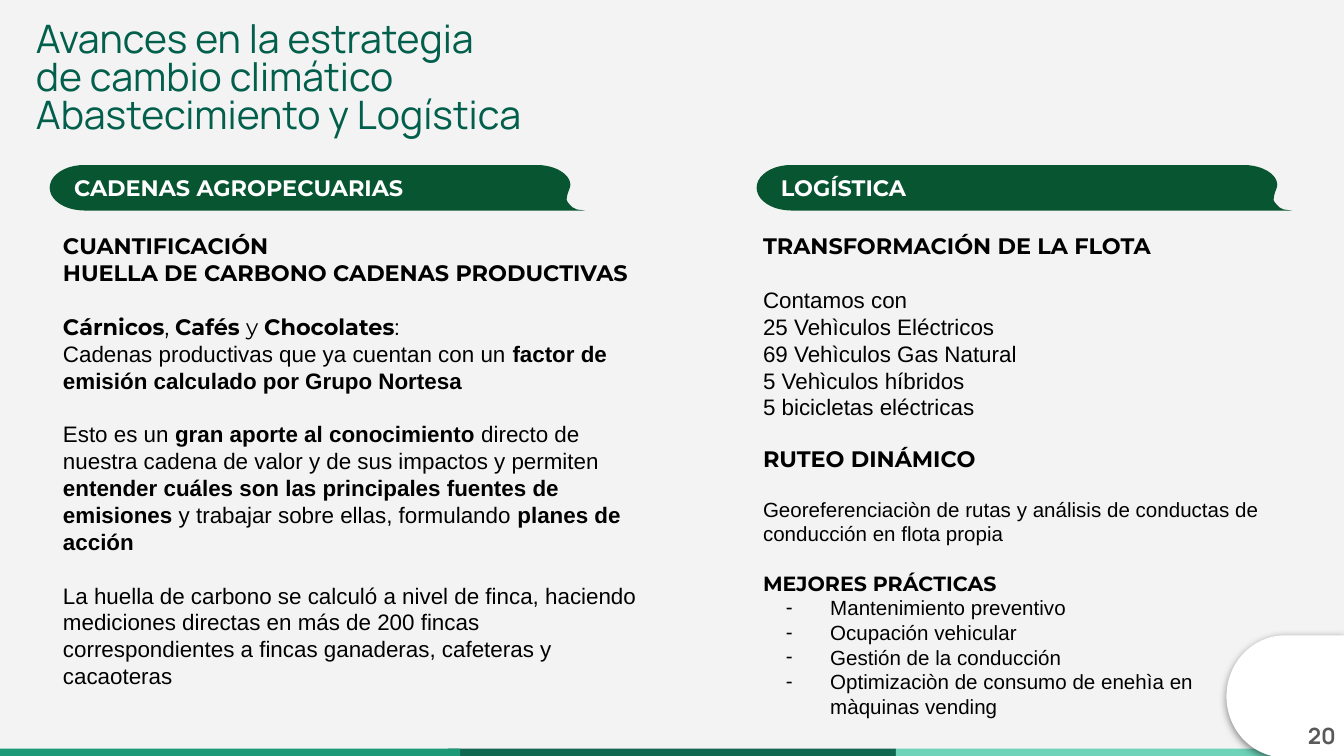
from math import cos, pi, sin

from lxml.etree import SubElement
from pptx import Presentation
from pptx.dml.color import RGBColor
from pptx.enum.shapes import MSO_SHAPE as SHAPE
from pptx.enum.text import MSO_ANCHOR as ANCHOR, MSO_AUTO_SIZE as AUTO, PP_ALIGN as ALIGN
from pptx.oxml.ns import qn
from pptx.util import Cm, Pt

BACKGROUND = RGBColor(0xF3, 0xF3, 0xF3)
BLACK = RGBColor(0, 0, 0)
WHITE = RGBColor(0xFF, 0xFF, 0xFF)
GREY = RGBColor(0x59, 0x59, 0x59)
TITLE_GREEN = RGBColor(0x01, 0x5F, 0x4B)
BANNER_GREEN = RGBColor(0x08, 0x56, 0x31)
DARK = RGBColor(0x11, 0x68, 0x50)
LIGHT = RGBColor(0x6E, 0xD3, 0xB8)
MEDIUM = RGBColor(0x1C, 0x9A, 0x78)

HEAD, BODY, DISPLAY = "Montserrat", "Arial", "Manrope"
PANEL_TOP, PANEL_HEIGHT = 4.14, 9.83

# Paragraphs: text with *bold* parts, font, size, space before, dash
SUPPLY = [
    ("*CUANTIFICACIÓN*", HEAD, 12, 0, False),
    ("*HUELLA DE CARBONO CADENAS PRODUCTIVAS*", HEAD, 12, 0, False),
    ("*Cárnicos*, *Cafés *y *Chocolates*:", HEAD, 12, 14.4, False),
    ("Cadenas productivas que ya cuentan con un *factor de emisión calculado "
     "por Grupo Nortesa*", BODY, 12, 0, False),
    ("Esto es un *gran aporte al conocimiento* directo de nuestra cadena de valor "
     "y de sus impactos y permiten *entender cuáles son las principales fuentes de "
     "emisiones* y trabajar sobre ellas, formulando *planes de acción*",
     BODY, 12, 14.4, False),
    ("La huella de carbono se calculó a nivel de finca, haciendo mediciones directas "
     "en más de 200 fincas correspondientes a fincas ganaderas, cafeteras y "
     "cacaoteras", BODY, 12, 14.4, False),
]
FLEET = ["25 Vehìculos Eléctricos", "69 Vehìculos Gas Natural",
         "5 Vehìculos híbridos", "5 bicicletas eléctricas"]
PRACTICES = ["Mantenimiento preventivo", "Ocupación vehicular",
             "Gestión de la conducción",
             "Optimizaciòn de consumo de enehìa en màquinas vending"]
LOGISTICS = [
    ("*TRANSFORMACIÓN DE LA FLOTA*", HEAD, 12, 0, False),
    ("Contamos con", BODY, 12, 14.4, False),
    *[(text, BODY, 12, 0, False) for text in FLEET],
    ("*RUTEO DINÁMICO*", HEAD, 12, 13.2, False),
    ("Georeferenciaciòn de rutas y análisis de conductas de conducción en flota "
     "propia", BODY, 11, 13.2, False),
    ("*MEJORES PRÁCTICAS*", HEAD, 11, 13.2, False),
    *[(text, BODY, 11, 0, True) for text in PRACTICES],
]


def arc(cx, cy, rx, ry, start, end, steps=20):
    """Points along an ellipse, angles in degrees."""
    angles = [(start + (end - start) * i / steps) * pi / 180 for i in range(steps + 1)]
    return [(cx + rx * cos(a), cy + ry * sin(a)) for a in angles]


class Deck:
    def __init__(self):
        self.prs = Presentation()
        self.prs.slide_width, self.prs.slide_height = Cm(25.4), Cm(14.29)
        self.s = self.prs.slides.add_slide(self.prs.slide_layouts[3])
        fill = self.s.background.fill
        fill.solid()
        fill.fore_color.rgb = BACKGROUND

    def paint(self, sp, color):
        sp.shadow.inherit = False
        sp.fill.solid()
        sp.fill.fore_color.rgb = color
        sp.line.fill.background()

    def shape(self, kind, box, color):
        sp = self.s.shapes.add_shape(kind, *map(Cm, box))
        self.paint(sp, color)
        return sp

    def tab(self, box):
        """White corner tab, rounded to the left, with a soft shadow."""
        sp = self.shape(SHAPE.FLOWCHART_DELAY, box, WHITE)
        pr = sp._element.spPr
        pr.find(qn("a:xfrm")).set("flipH", "1")
        shadow = SubElement(pr.find(qn("a:effectLst")), qn("a:outerShdw"),
                            blurRad=str(Pt(4.5)), dist=str(Pt(1.5)), dir="5400000",
                            algn="bl", rotWithShape="0")
        color = SubElement(shadow, qn("a:srgbClr"), val=str(BLACK))
        SubElement(color, qn("a:alpha"), val="50000")

    def frame(self, sp, left=0.25, anchor=ANCHOR.TOP):
        tf = sp.text_frame
        tf.word_wrap = True
        tf.auto_size = AUTO.NONE
        tf.vertical_anchor = anchor
        tf.margin_left = Cm(left)
        tf.margin_top = tf.margin_right = tf.margin_bottom = Cm(0.25)
        return tf

    def style(self, p, font, size, color, bold=None, align=ALIGN.LEFT):
        p.alignment = align
        p.font.name, p.font.size, p.font.bold = font, Pt(size), bold
        p.font.color.rgb = color

    def place(self, index, box):
        """Move a placeholder into its box and to the front."""
        sp = self.s.placeholders[index]
        sp.left, sp.top, sp.width, sp.height = map(Cm, box)
        self.s.shapes._spTree.append(sp._element)
        return self.frame(sp)

    def panel(self, index, box, paragraphs):
        tf = self.place(index, box)
        for i, (text, font, size, before, dash) in enumerate(paragraphs):
            p = tf.paragraphs[0] if i == 0 else tf.add_paragraph()
            pr = p._p.get_or_add_pPr()
            pr.set("marL", str(Cm(1.27 if dash else 0)))
            pr.set("indent", str(Cm(-0.84 if dash else 0)))
            if dash:
                SubElement(pr, qn("a:buChar"), char="-")
            else:
                SubElement(pr, qn("a:buNone"))
            p.space_before = Pt(before)
            parts = text.split("*")
            for j, part in enumerate(parts):
                if part:
                    r = p.add_run()
                    r.text = part
                    if len(p.runs) and len(parts) > 3:
                        r.font.bold = j % 2 == 1
                    elif len(parts) > 1:
                        r.font.bold = j % 2 == 1
            self.style(p, font, size, BLACK)

    def banner(self, left, top, text):
        """Ribbon with a round left end and a curled tail at the right."""
        tail = [(9.83, 0.43), (9.8, 0.51), (9.78, 0.58), (9.77, 0.66), (9.79, 0.7),
                (9.83, 0.75), (9.88, 0.8), (9.96, 0.84), (10.11, 0.86)]
        points = (arc(0.65, 0.43, 0.65, 0.43, 270, 90)
                  + tail[::-1] + arc(9.2, 0.38, 0.64, 0.38, 0, -90))
        points = [(Cm(left + x), Cm(top + y)) for x, y in points]
        builder = self.s.shapes.build_freeform(*points[0])
        builder.add_line_segments(points[1:])
        sp = builder.convert_to_shape()
        self.paint(sp, BANNER_GREEN)
        p = self.frame(sp, 0.46, ANCHOR.MIDDLE).paragraphs[0]
        p.text = text
        self.style(p, HEAD, 12, WHITE, True)

    def title(self, box, lines):
        tf = self.place(0, box)
        tf.text = "\n".join(lines)
        for p in tf.paragraphs:
            p.line_spacing = 0.8
            self.style(p, DISPLAY, 21, TITLE_GREEN)

    def page_number(self, box, text):
        p = self.frame(self.s.shapes.add_textbox(*map(Cm, box))).paragraphs[0]
        p.text = text
        self.style(p, DISPLAY, 12, GREY, True, ALIGN.RIGHT)


def main():
    deck = Deck()
    # Footer stripe and corner tab
    for left, width, color in [(8.47, 8.47, DARK), (16.93, 8.47, LIGHT),
                               (-0.04, 8.74, MEDIUM)]:
        deck.shape(SHAPE.RECTANGLE, (left, 14.15, width, 0.17), color)
    deck.tab((23.18, 12.01, 2.22, 2.31))
    # Columns
    deck.panel(2, (14.17, PANEL_TOP, 10.39, PANEL_HEIGHT), LOGISTICS)
    deck.panel(1, (0.94, PANEL_TOP, 11.68, PANEL_HEIGHT), SUPPLY)
    deck.banner(14.3, 3.12, "LOGÍSTICA")
    deck.banner(0.94, 3.12, "CADENAS AGROPECUARIAS")
    # Title and page number
    deck.title((0.43, 0.2, 17.02, 2.67),
               ["Avances en la estrategia", "de cambio climático",
                "Abastecimiento y Logística"])
    deck.page_number((23.98, 13.41, 1.52, 1.09), "20")
    deck.prs.save("out.pptx")


if __name__ == "__main__":
    main()
